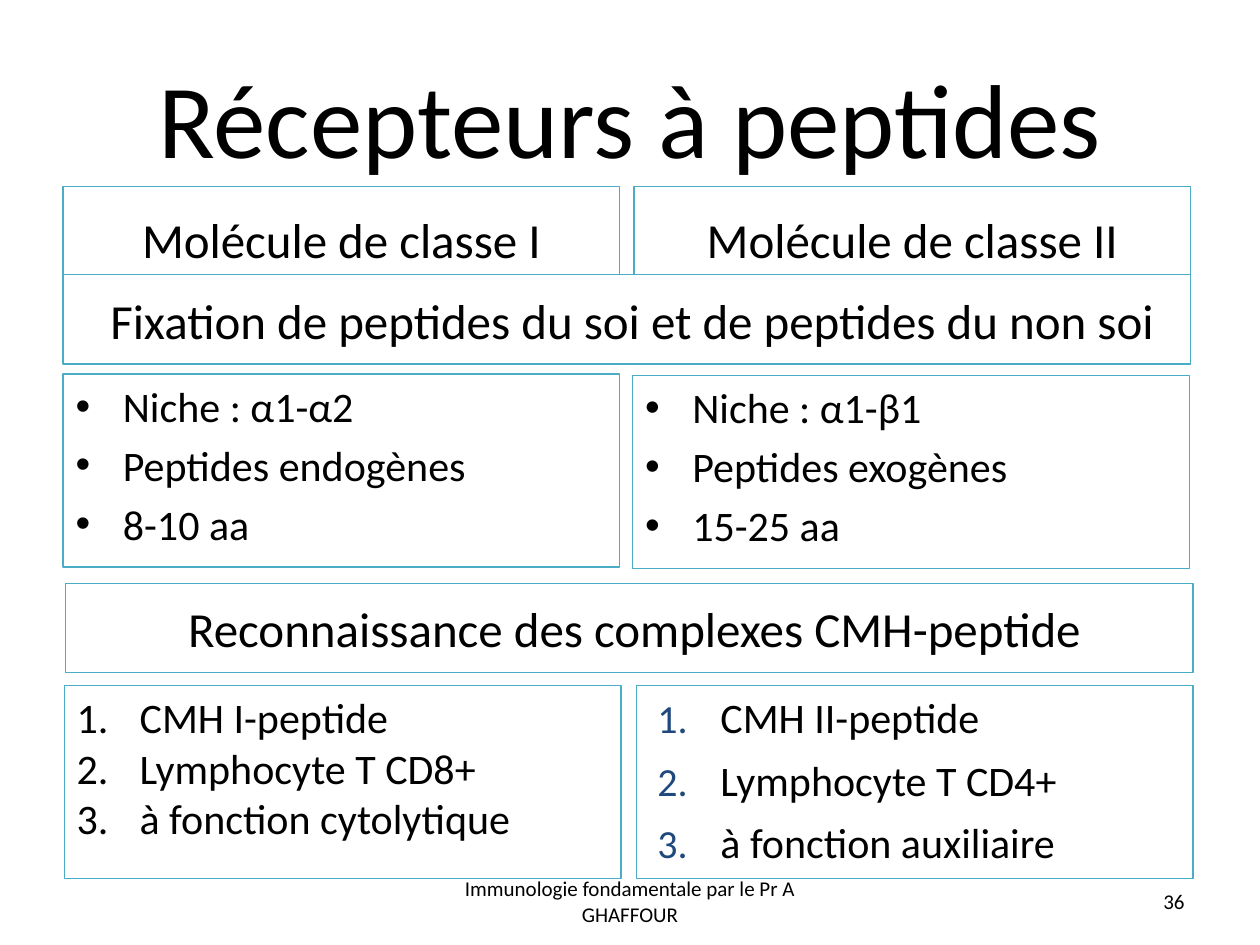
from lxml import etree
from pptx import Presentation
from pptx.dml.color import RGBColor
from pptx.enum.shapes import MSO_SHAPE
from pptx.enum.text import MSO_ANCHOR, MSO_AUTO_SIZE, PP_ALIGN
from pptx.oxml.ns import qn
from pptx.util import Pt

LEFT, CENTER, RIGHT = PP_ALIGN.LEFT, PP_ALIGN.CENTER, PP_ALIGN.RIGHT
TOP, MIDDLE, BOTTOM = MSO_ANCHOR.TOP, MSO_ANCHOR.MIDDLE, MSO_ANCHOR.BOTTOM
RECTANGLE, NO_AUTOFIT = MSO_SHAPE.RECTANGLE, MSO_AUTO_SIZE.NONE
BLACK = RGBColor(0x00, 0x00, 0x00)
NAVY = RGBColor(0x1F, 0x49, 0x7D)
TEAL = RGBColor(0x4B, 0xAC, 0xC6)
FONT = "Calibri"

TITLE = "Récepteurs à peptides"
CLASSES = [
    {
        "heading": "Molécule de classe I",
        "binding": ["Niche : α1-α2", "Peptides endogènes", "8-10 aa"],
        "recognition": ["CMH I-peptide", "Lymphocyte T CD8+", "à fonction cytolytique"],
        "lefts": (36, 36, 36.7),
        "binding_top": 213.8,
        "numbering": {"indent": (36, -36)},
    },
    {
        "heading": "Molécule de classe II",
        "binding": ["Niche : α1-β1", "Peptides exogènes", "15-25 aa"],
        "recognition": ["CMH II-peptide", "Lymphocyte T CD4+", "à fonction auxiliaire"],
        "lefts": (362.2, 361.4, 363.6),
        "binding_top": 214.6,
        "numbering": {"indent": (41, -36), "before": 7,
                      "marker_color": NAVY, "marker_size": 95},
    },
]
BANNERS = [
    ("Fixation de peptides du soi et de peptides du non soi", 36, 157),
    ("Reconnaissance des complexes CMH-peptide", 37.4, 333.4),
]
FOOTER = [
    ("Immunologie fondamentale par le Pr A GHAFFOUR", 246, 228, CENTER),
    ("36", 516, 168, RIGHT),
]
COLUMN_WIDTH, BANNER_WIDTH = 318.2, 644.4
HEADING_TOP, HEADING_HEIGHT = 106.6, 50.4
BANNER_HEIGHT, LIST_HEIGHT = 51, 110.2
RECOGNITION_TOP = 391.7


def place(part, left, top, width, height):
    part.left, part.top, part.width, part.height = map(Pt, (left, top, width, height))


def outline(part):
    part.fill.background()
    part.line.color.rgb = TEAL
    part.line.width = Pt(0.75)


def mark(properties, tag, **attributes):
    child = etree.SubElement(properties, qn(tag))
    for key, value in attributes.items():
        child.set(key, str(value))
    return child


def write(part, lines, size, align=LEFT, anchor=TOP, before=0, indent=(0, 0),
          bullet=None, marker_color=None, marker_size=None):
    frame = part.text_frame
    frame.word_wrap = True
    frame.auto_size = NO_AUTOFIT
    frame.vertical_anchor = anchor
    for index, line in enumerate(lines):
        paragraph = frame.add_paragraph() if index else frame.paragraphs[0]
        paragraph.alignment = align
        paragraph.space_before = Pt(before)
        run = paragraph.add_run()
        run.text = line
        run.font.name = FONT
        run.font.size = Pt(size)
        run.font.bold = False
        run.font.color.rgb = BLACK
        properties = paragraph._p.get_or_add_pPr()
        properties.set("marL", str(Pt(indent[0])))
        properties.set("indent", str(Pt(indent[1])))
        if marker_color is not None:
            mark(mark(properties, "a:buClr"), "a:srgbClr", val=marker_color)
        if marker_size:
            mark(properties, "a:buSzPct", val=marker_size * 1000)
        if bullet == "number":
            mark(properties, "a:buFont", typeface="+mj-lt")
            mark(properties, "a:buAutoNum", type="arabicPeriod")
        elif bullet:
            mark(properties, "a:buFont", typeface="Arial")
            mark(properties, "a:buChar", char=bullet)
        else:
            mark(properties, "a:buNone")


def add_box(slide, left, top, width, height):
    box = slide.shapes.add_shape(RECTANGLE, Pt(left), Pt(top), Pt(width), Pt(height))
    box.shadow.inherit = False
    outline(box)
    return box


def main():
    deck = Presentation()
    deck.slide_width, deck.slide_height = Pt(720), Pt(540)
    slide = deck.slides.add_slide(deck.slide_layouts.get_by_name("Comparison"))
    title, *bodies = slide.placeholders
    place(title, 36, 21.6, 648, 90)
    write(title, [TITLE], 60, CENTER, MIDDLE)

    for column, heading, binding in zip(CLASSES, bodies[::2], bodies[1::2]):
        heading_left, binding_left, recognition_left = column["lefts"]
        place(heading, heading_left, HEADING_TOP, COLUMN_WIDTH, HEADING_HEIGHT)
        outline(heading)
        write(heading, [column["heading"]], 28, CENTER, BOTTOM, before=5.6)
        place(binding, binding_left, column["binding_top"], COLUMN_WIDTH, LIST_HEIGHT)
        outline(binding)
        write(binding, column["binding"], 24, before=4.8, indent=(27, -27), bullet="•")
        recognition = add_box(slide, recognition_left, RECOGNITION_TOP,
                              COLUMN_WIDTH, LIST_HEIGHT)
        write(recognition, column["recognition"], 24, bullet="number",
              **column["numbering"])

    for text, left, top in BANNERS:
        banner = add_box(slide, left, top, BANNER_WIDTH, BANNER_HEIGHT)
        write(banner, [text], 28, CENTER, MIDDLE, before=7, indent=(5.8, 0))

    for text, left, width, align in FOOTER:
        note = slide.shapes.add_textbox(Pt(left), Pt(500.5), Pt(width), Pt(28.8))
        write(note, [text], 12, align, MIDDLE)

    deck.save("out.pptx")


if __name__ == "__main__":
    main()
